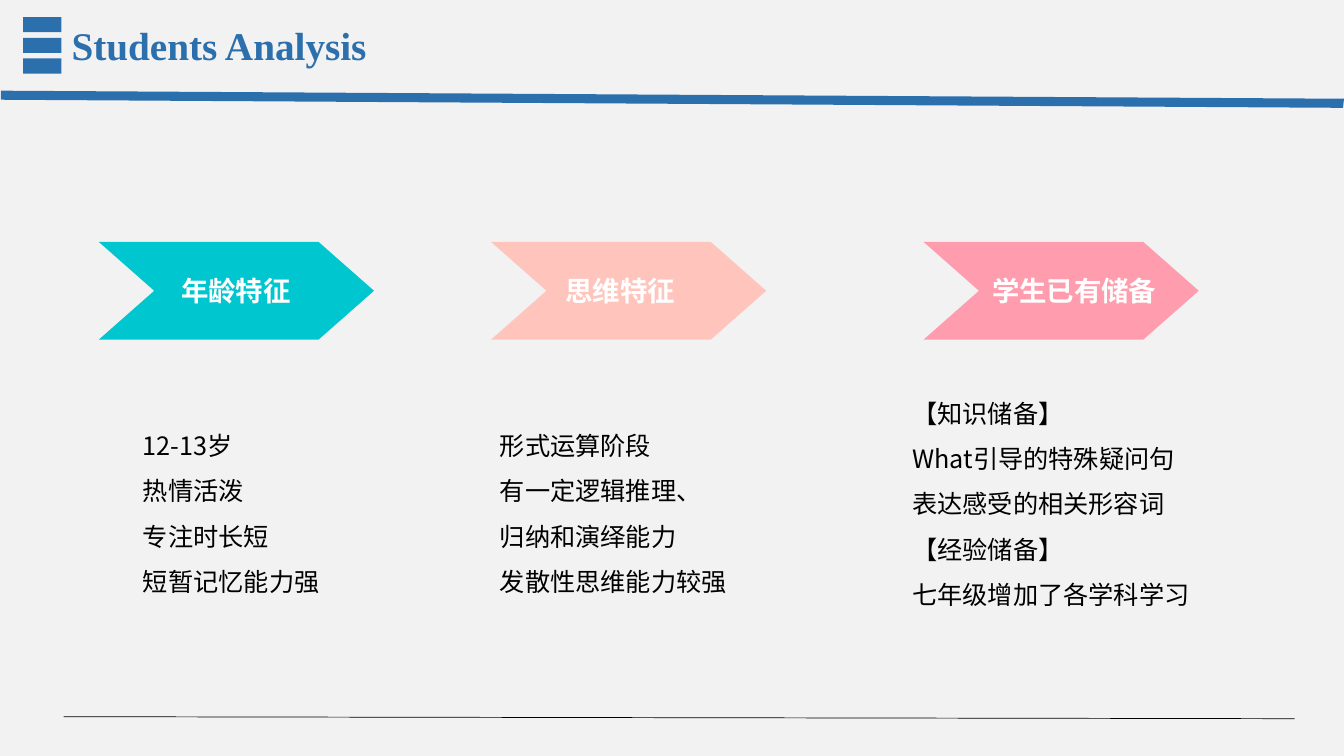
from lxml import etree
from pptx import Presentation
from pptx.dml.color import RGBColor
from pptx.enum.shapes import MSO_CONNECTOR, MSO_SHAPE
from pptx.enum.text import PP_ALIGN
from pptx.oxml.ns import qn
from pptx.util import Inches, Pt

CHEVRON, RECT = MSO_SHAPE.CHEVRON, MSO_SHAPE.RECTANGLE
STRAIGHT = MSO_CONNECTOR.STRAIGHT
LEFT, CENTER, JUSTIFY = PP_ALIGN.LEFT, PP_ALIGN.CENTER, PP_ALIGN.JUSTIFY

BLUE = RGBColor(0x2C, 0x6F, 0xAD)
TEAL = RGBColor(0x00, 0xC6, 0xCF)
PEACH = RGBColor(0xFF, 0xC5, 0xBD)
PINK = RGBColor(0xFF, 0x9D, 0xAE)
WHITE = RGBColor(0xFF, 0xFF, 0xFF)
BLACK = RGBColor(0, 0, 0)
PAPER = RGBColor(0xF2, 0xF2, 0xF2)
CJK_FONT = "Noto Sans CJK SC"

# Content
TITLE = "Students Analysis"
# heading, colour, arrow left, (label left, width, alignment), (body left, top, width, height), lines
COLUMNS = [
    ("年龄特征", TEAL, 0.98, (1.37, 1.94, CENTER), (1.32, 4.07, 3.4, 1.92),
     ["12-13岁", "热情活泼", "专注时长短", "短暂记忆能力强"]),
    ("思维特征", PEACH, 4.87, (5.51, 1.46, JUSTIFY), (4.86, 4.07, 3.4, 1.92),
     ["形式运算阶段", "有一定逻辑推理、", "归纳和演绎能力", "发散性思维能力较强"]),
    ("学生已有储备", PINK, 9.16, (9.74, 1.83, CENTER), (8.95, 3.75, 4.21, 2.37),
     ["【知识储备】", "What引导的特殊疑问句", "表达感受的相关形容词",
      "【经验储备】", "七年级增加了各学科学习"]),
]

# Layout
ARROW_TOP, ARROW_W, ARROW_H, ARROW_POINT = 2.4, 2.73, 0.97, 0.55
LABEL_TOP, LABEL_H = 2.67, 0.43
BAR_LEFT, BAR_TOP, BAR_W, BAR_H, BAR_STEP = 0.23, 0.17, 0.38, 0.15, 0.205
BAND = [(0.01, 0.9), (13.33, 0.98), (13.32, 1.07), (0.01, 0.99)]


def paint(sp, color):
    sp.shadow.inherit = False
    sp.fill.solid()
    sp.fill.fore_color.rgb = color
    sp.line.fill.background()


def add_shape(kind, left, top, width, height, color):
    sp = slide.shapes.add_shape(kind, Inches(left), Inches(top), Inches(width), Inches(height))
    paint(sp, color)
    return sp


def add_text(box, lines, size, font, color, bold=False, align=LEFT, spacing=None, wrap=True):
    tf = slide.shapes.add_textbox(*[Inches(v) for v in box]).text_frame
    tf.word_wrap = wrap
    tf.text = "\n".join(lines)
    for p in tf.paragraphs:
        p.alignment = align
        p.line_spacing = spacing
        r = p.runs[0]
        r.font.size, r.font.name, r.font.bold = Pt(size), font, bold
        r.font.color.rgb = color
        etree.SubElement(r.font._element, qn("a:ea")).set("typeface", CJK_FONT)
    return tf


prs = Presentation()
prs.slide_width, prs.slide_height = Inches(13.33), Inches(7.5)
slide = prs.slides.add_slide(prs.slide_layouts[6])
slide.background.fill.solid()
slide.background.fill.fore_color.rgb = PAPER

# Header: slanted band, three bars and title
points = [(Inches(x), Inches(y)) for x, y in BAND]
outline = slide.shapes.build_freeform(*points[0])
outline.add_line_segments(points[1:])
paint(outline.convert_to_shape(), BLUE)
for i in range(3):
    add_shape(RECT, BAR_LEFT, BAR_TOP + i * BAR_STEP, BAR_W, BAR_H, BLUE)
tf = add_text((0.71, 0.2, 6.8, 0.48), [TITLE], 28, "Times New Roman", BLUE, bold=True)
tf.margin_left = tf.margin_right = tf.margin_bottom = 0
tf.margin_top = Inches(0.01)

# Columns: arrow, heading and body
for heading, color, left, (label_left, label_w, align), body, lines in COLUMNS:
    arrow = add_shape(CHEVRON, left, ARROW_TOP, ARROW_W, ARROW_H, color)
    arrow.adjustments[0] = ARROW_POINT / ARROW_H
    add_text((label_left, LABEL_TOP, label_w, LABEL_H), [heading], 19.6, "Arial", WHITE,
             bold=True, align=align, wrap=False)
    add_text(body, lines, 18, CJK_FONT, BLACK, spacing=1.5)

# Footer rule
rule = slide.shapes.add_connector(STRAIGHT, Inches(0.63), Inches(7.11), Inches(12.84), Inches(7.13))
rule.line.color.rgb = BLACK
rule.line.width = Pt(0.5)
etree.SubElement(rule._element.spPr, qn("a:effectLst"))

prs.save("out.pptx")
